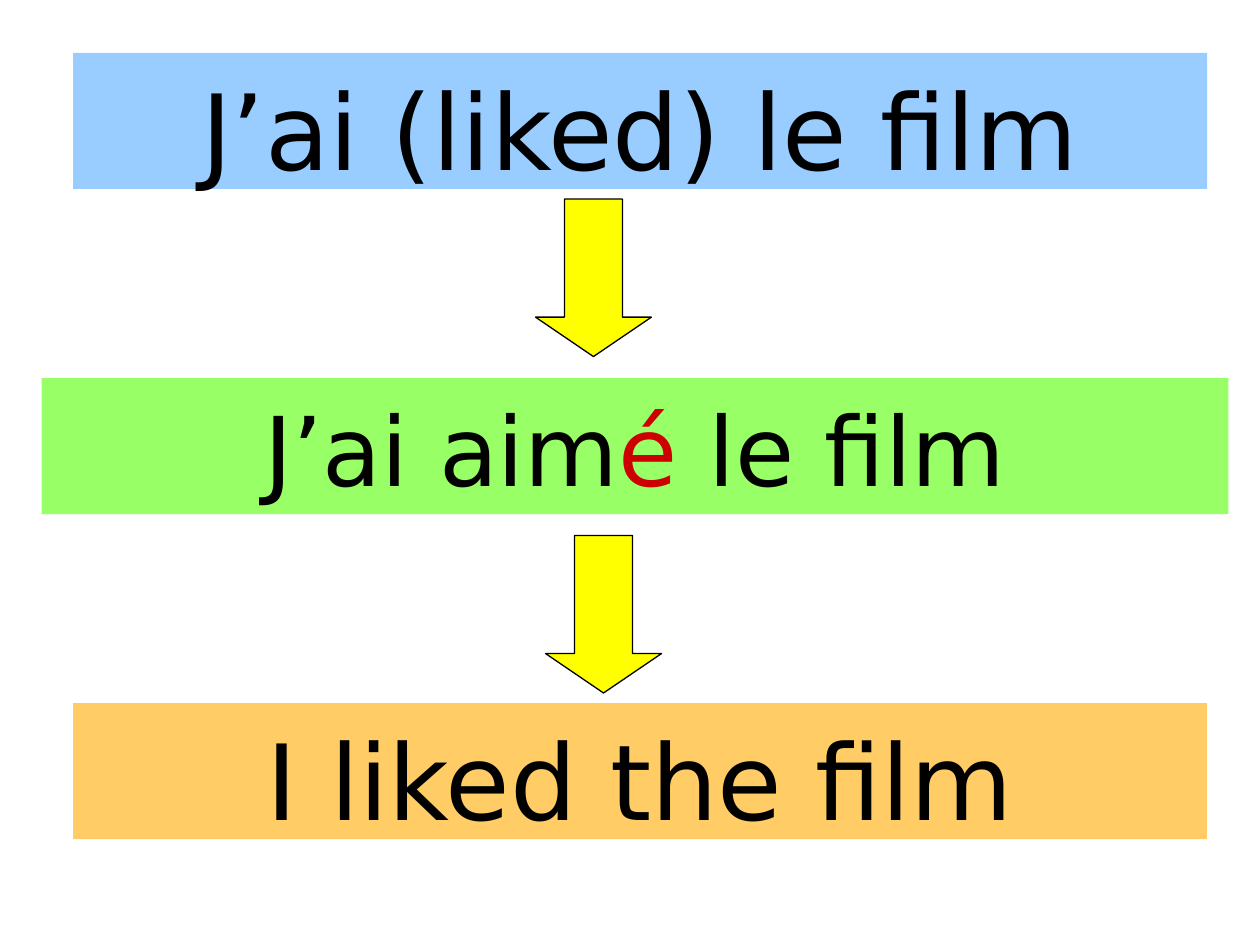
from dataclasses import dataclass

from pptx import Presentation
from pptx.dml.color import RGBColor
from pptx.enum import shapes, text
from pptx.shapes.autoshape import Shape
from pptx.slide import Slide
from pptx.util import Inches, Pt

FONT = "DejaVu Sans"
BLACK = "000000"
BANNER_HEIGHT = 1.08
ARROW_WIDTH, ARROW_HEIGHT = 0.92, 1.25


@dataclass
class Banner:
    left: float
    top: float
    width: float
    fill: str
    size: int
    runs: list[tuple[str, str]]


@dataclass
class Arrow:
    left: float
    top: float


BANNERS = [
    Banner(0.58, 0.42, 9, "99CCFF", 60, [("J’ai (liked) le film", BLACK)]),
    Banner(0.33, 3, 9.42, "99FF66", 55,
           [("J’ai aim", BLACK), ("é", "CC0000"), (" le film", BLACK)]),
    Banner(0.58, 5.58, 9, "FFCC66", 60, [("I liked the film", BLACK)]),
]
ARROWS = [Arrow(4.25, 1.58), Arrow(4.33, 4.25)]


def color(value: str) -> RGBColor:
    return RGBColor.from_string(value)


def apply_format(target: object, values: dict[str, object]) -> None:
    for name, value in values.items():
        setattr(target, name, value)


def fill_shape(shape: Shape, value: str) -> None:
    shape.fill.solid()
    shape.fill.fore_color.rgb = color(value)


def draw_banner(shape: Shape, banner: Banner) -> None:
    apply_format(shape, {
        "left": Inches(banner.left), "top": Inches(banner.top),
        "width": Inches(banner.width), "height": Inches(BANNER_HEIGHT),
    })
    fill_shape(shape, banner.fill)
    shape.line.fill.background()
    frame = shape.text_frame
    apply_format(frame, {
        "word_wrap": True,
        "auto_size": text.MSO_AUTO_SIZE.NONE,
        "vertical_anchor": text.MSO_ANCHOR.TOP,
        "margin_top": Inches(0.1), "margin_bottom": 0,
    })
    paragraph = frame.paragraphs[0]
    apply_format(paragraph, {"alignment": text.PP_ALIGN.CENTER, "space_before": Pt(0)})
    for content, run_color in banner.runs:
        run = paragraph.add_run()
        run.text = content
        apply_format(run.font, {"name": FONT, "size": Pt(banner.size)})
        run.font.color.rgb = color(run_color)


def draw_arrow(slide: Slide, arrow: Arrow) -> None:
    shape = slide.shapes.add_shape(
        shapes.MSO_SHAPE.DOWN_ARROW, Inches(arrow.left), Inches(arrow.top),
        Inches(ARROW_WIDTH), Inches(ARROW_HEIGHT))
    shape.shadow.inherit = False
    shape.adjustments[0] = 0.5
    shape.adjustments[1] = 0.34
    fill_shape(shape, "FFFF00")
    shape.line.color.rgb = color(BLACK)
    shape.line.width = Pt(0.75)


def main() -> None:
    presentation = Presentation()
    apply_format(presentation, {"slide_width": Inches(10), "slide_height": Inches(7.5)})
    slide = presentation.slides.add_slide(presentation.slide_layouts[0])
    title = slide.shapes.title.element
    title.getparent().remove(title)

    first, *others = BANNERS
    draw_banner(slide.placeholders[1], first)
    for banner in others:
        shape = slide.shapes.add_shape(shapes.MSO_SHAPE.RECTANGLE, 0, 0, 0, 0)
        shape.shadow.inherit = False
        draw_banner(shape, banner)
    for arrow in ARROWS:
        draw_arrow(slide, arrow)
    presentation.save("out.pptx")


if __name__ == "__main__":
    main()
